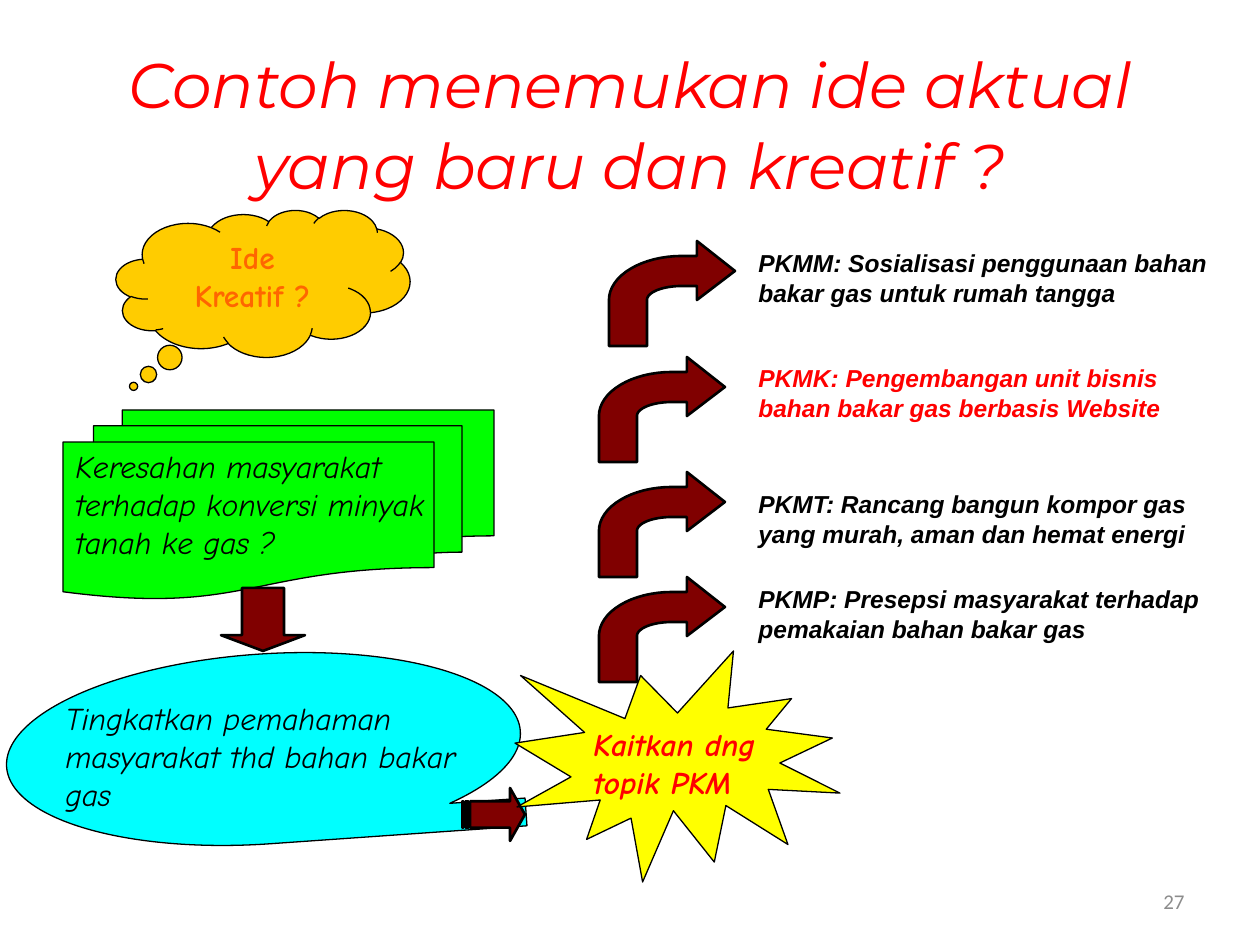
from math import cos, pi, sin

from pptx import Presentation
from pptx.dml.color import RGBColor
from pptx.enum.shapes import MSO_SHAPE as Shape
from pptx.enum.text import MSO_ANCHOR as Anchor, MSO_AUTO_SIZE as AutoSize, PP_ALIGN as Align
from pptx.util import Pt

PX = 914400 / 126
BLACK = RGBColor(0x00, 0x00, 0x00)
GRAY = RGBColor(0x8C, 0x8C, 0x8C)
RED = RGBColor(0xFF, 0x00, 0x00)
MAROON = RGBColor(0x80, 0x00, 0x00)
GOLD = RGBColor(0xFF, 0xCC, 0x00)
ORANGE = RGBColor(0xFF, 0x66, 0x00)
GREEN = RGBColor(0x00, 0xFF, 0x00)
CYAN = RGBColor(0x00, 0xFF, 0xFF)
YELLOW = RGBColor(0xFF, 0xFF, 0x00)


def write(text, box=None, holder=None, size=18, font="Comic Neue", color=BLACK, bold=False,
          italic=True, align=Align.LEFT, anchor=Anchor.TOP, spacing=None):
    """Write text into a holder, or into a new text box at box (px)."""
    if holder is None:
        holder = slide.shapes.add_textbox(*[round(v * PX) for v in box])
    frame = holder.text_frame
    frame.word_wrap = True
    frame.auto_size = AutoSize.NONE
    frame.vertical_anchor = anchor
    paragraph = frame.paragraphs[0]
    paragraph.alignment = align
    paragraph.line_spacing = spacing
    run = paragraph.add_run()
    run.text = text
    run.font.size, run.font.name = Pt(size), font
    run.font.bold, run.font.italic = bold, italic
    run.font.color.rgb = color


def paint(shape, fill, weight=0.75):
    """Give a shape its fill and black outline."""
    shape.shadow.inherit = False
    shape.fill.solid()
    shape.fill.fore_color.rgb = fill
    shape.line.color.rgb = BLACK
    shape.line.width = Pt(weight)
    return shape


prs = Presentation()
prs.slide_width, prs.slide_height = round(1260 * PX), round(945 * PX)
slide = prs.slides.add_slide(prs.slide_layouts[5])

# Title
title = slide.shapes.title
title.left, title.top, title.width, title.height = [round(v * PX) for v in (63, 42, 1134, 158)]
write("Contoh menemukan ide aktual yang baru dan kreatif ?", holder=title, size=36,
      font="Montserrat", color=RED, align=Align.CENTER, anchor=Anchor.MIDDLE, spacing=1.07)

# Flow from the concern to the PKM topic: kind, box, fill, line weight, adjustments, rotation
flow = [
    (Shape.CLOUD_CALLOUT, (116, 210, 294, 147), GOLD, 0.75, (-0.44, 0.7), 0),
    (Shape.FLOWCHART_MULTIDOCUMENT, (63, 410, 431, 189), GREEN, 0.75, (), 0),
    (Shape.DOWN_ARROW, (221, 588, 84, 63), MAROON, 1.5, (0.5, 0.25), 0),
    (Shape.FLOWCHART_SEQUENTIAL_ACCESS_STORAGE, (6, 654, 515, 190), CYAN, 0.75, (), 356),
    (Shape.STRIPED_RIGHT_ARROW, (462, 788, 63, 53), MAROON, 1.5, (0.5, 0.28), 0),
    (Shape.EXPLOSION1, (515, 651, 325, 231), YELLOW, 0.75, (), 0),
]

# Bent arrow outline in px: two quarter ellipses share the centre (73, 59)
steps = [pi / 2 * i / 16 for i in range(17)]
outer_bend = [(73 - 73 * sin(a), 59 - 44 * cos(a)) for a in steps]
inner_bend = [(73 - 35 * cos(a), 59 - 14 * sin(a)) for a in steps]
bent_outline = ([(126, 30), (88, 0), (88, 15)] + outer_bend + [(0, 105), (38, 105)]
                + inner_bend + [(88, 45), (88, 59)])
for left, top in [(599, 577), (609, 241), (599, 357), (599, 472)]:
    points = [(round((left + x) * PX), round((top + y) * PX)) for x, y in bent_outline]
    builder = slide.shapes.build_freeform(*points[0])
    builder.add_line_segments(points[1:], close=True)
    paint(builder.convert_to_shape(), MAROON, 1.5)

for kind, box, fill, weight, adjustments, rotation in flow:
    step = paint(slide.shapes.add_shape(kind, *[round(v * PX) for v in box]), fill, weight)
    step.rotation = rotation
    for i, value in enumerate(adjustments):
        step.adjustments[i] = value
    if kind == Shape.CLOUD_CALLOUT:
        write("Ide Kreatif ?", holder=step, color=ORANGE, bold=True, italic=False,
              align=Align.CENTER)

# Texts over the flow
write("Keresahan masyarakat terhadap konversi minyak tanah ke gas ?", (63, 441, 410, 127))
write("Tingkatkan pemahaman masyarakat thd bahan bakar gas", (53, 693, 440, 127))
write("Kaitkan dng topik PKM", (581, 719, 239, 89), color=RED, bold=True)

# PKM topics
topics = [
    (242, 494, BLACK, "PKMM: Sosialisasi penggunaan bahan bakar gas untuk rumah tangga"),
    (357, 494, RED, "PKMK: Pengembangan unit bisnis bahan bakar gas berbasis Website"),
    (483, 494, BLACK, "PKMT: Rancang bangun kompor gas yang murah, aman dan hemat energi"),
    (578, 473, BLACK, "PKMP: Presepsi masyarakat terhadap pemakaian bahan bakar gas"),
]
for top, width, color, topic in topics:
    write(topic, (746, top, width, 72), size=14, font="Arial", color=color, bold=True)

# Slide number
write("27", (903, 876, 294, 50), size=12, font="Calibri", color=GRAY, italic=False,
      align=Align.RIGHT, anchor=Anchor.MIDDLE)

prs.save("out.pptx")
